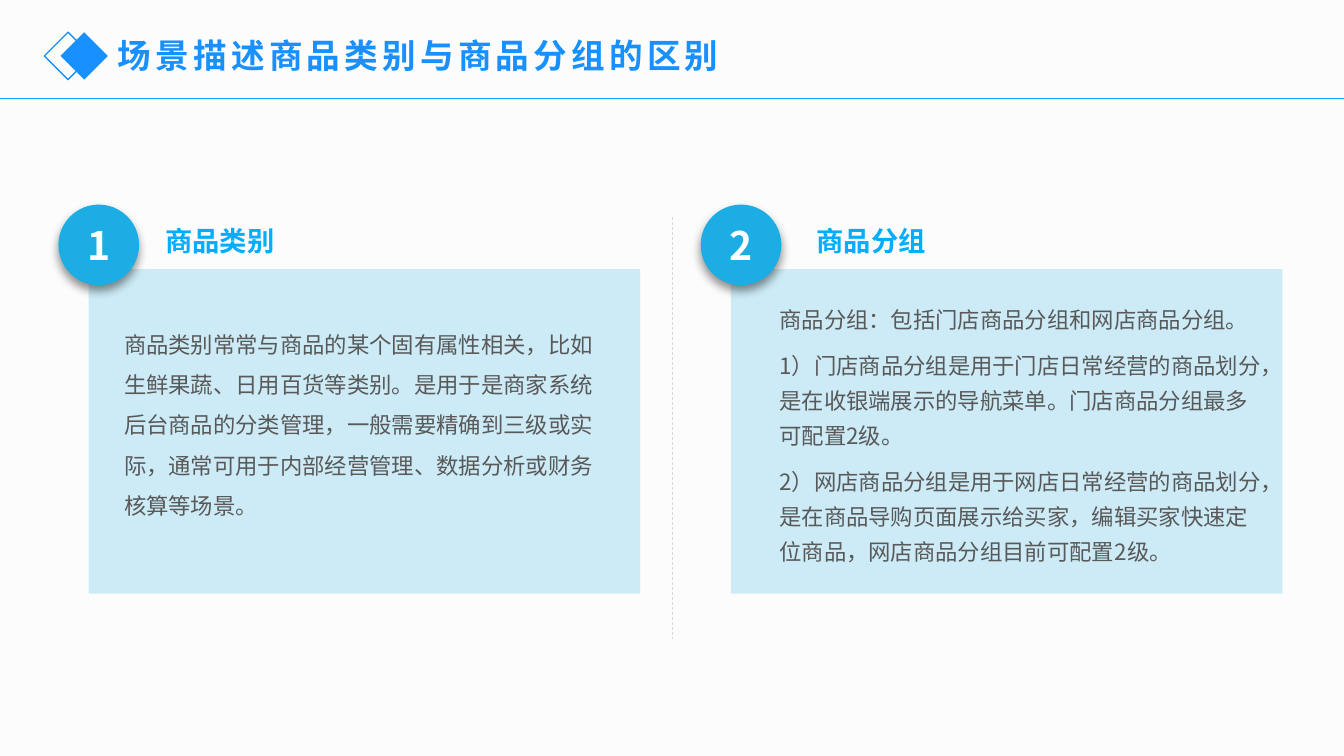
from lxml import etree
from pptx import Presentation
from pptx import util as u
from pptx.dml.color import RGBColor
from pptx.enum import dml, shapes, text
from pptx.oxml import ns

COLORS = {
    "background": "FCFCFC",
    "title": "1890FF",
    "accent": "00ADFF",
    "panel": "1CADE4",
    "body": "595959",
    "divider": "D9D9D9",
    "white": "FFFFFF",
    "shadow": "000000",
}
FONT = "Noto Sans CJK SC"
SLIDE_W, SLIDE_H = 13.33, 7.5


def rgb(name):
    return RGBColor.from_string(COLORS[name])


def add_xml(parent, tag, **attributes):
    return etree.SubElement(parent, ns.qn(tag), {k: str(v) for k, v in attributes.items()})


def place(part, left, top, width, height):
    part.left, part.top = u.Inches(left), u.Inches(top)
    part.width, part.height = u.Inches(width), u.Inches(height)


def write(part, lines, size, color, bold=False, align="LEFT", anchor="TOP",
          line_spacing=1.0, after=0, tracking=0):
    """Fill a shape, text box or placeholder with formatted paragraphs."""
    frame = part.text_frame
    frame.word_wrap = True
    frame.auto_size = text.MSO_AUTO_SIZE.NONE
    frame.vertical_anchor = getattr(text.MSO_ANCHOR, anchor)
    for index, line in enumerate(lines):
        paragraph = frame.add_paragraph() if index else frame.paragraphs[0]
        properties = paragraph._p.get_or_add_pPr()
        properties.set("marL", "0")
        properties.set("indent", "0")
        add_xml(properties, "a:buNone")
        paragraph.alignment = getattr(text.PP_ALIGN, align)
        paragraph.line_spacing = line_spacing
        paragraph.space_before = u.Pt(0)
        paragraph.space_after = u.Pt(after)
        run = paragraph.add_run()
        run.text = line
        run.font.size, run.font.bold = u.Pt(size), bold
        run.font.color.rgb = rgb(color)
        run.font.name = FONT
        run_properties = run._r.get_or_add_rPr()
        add_xml(run_properties, "a:ea", typeface=FONT)
        if tracking:
            run_properties.set("spc", str(tracking * 100))


def add_shape(slide, kind, box, fill=None, line=None, opacity=100):
    shape = slide.shapes.add_shape(kind, *map(u.Inches, box))
    shape.shadow.inherit = False
    if fill:
        shape.fill.solid()
        shape.fill.fore_color.rgb = rgb(fill)
        if opacity < 100:
            color = shape._element.spPr.find(".//" + ns.qn("a:srgbClr"))
            add_xml(color, "a:alpha", val=opacity * 1000)
    else:
        shape.fill.background()
    if line:
        shape.line.color.rgb = rgb(line)
        shape.line.width = u.Pt(1)
    else:
        shape.line.fill.background()
    return shape


def add_line(slide, start, end, color, width, dash=None):
    line = slide.shapes.add_connector(
        shapes.MSO_CONNECTOR.STRAIGHT, *map(u.Inches, (*start, *end)))
    line.line.color.rgb = rgb(color)
    line.line.width = u.Pt(width)
    if dash:
        line.line.dash_style = dash
    add_xml(line._element.spPr, "a:effectLst")


def add_header(slide, left, top, title):
    """Rule, pair of diamonds and title."""
    add_line(slide, (0, 0.98), (SLIDE_W, 0.98), "accent", 1)
    diamond = shapes.MSO_SHAPE.DIAMOND
    add_shape(slide, diamond, (left, top, 0.47, 0.47), line="title")
    add_shape(slide, diamond, (left + 0.16, top, 0.47, 0.47), fill="title")
    place(slide.shapes.title, left + 0.63, top - 0.02, 6.8, 0.5)
    write(slide.shapes.title, [title], 24, "title", bold=True, tracking=3)


def add_column(slide, box, number, heading, description, lines,
               heading_dx, text_dx, text_dy, line_spacing):
    """Tinted panel with a numbered badge, a heading and a description."""
    left, top, width, height = box
    add_shape(slide, shapes.MSO_SHAPE.RECTANGLE, box, fill="panel", opacity=21)

    # Description, brought in front of its panel
    place(description, left + text_dx, top + text_dy, 5.04, 3.02)
    write(description, lines, 16, "body", line_spacing=line_spacing, after=8)
    slide.shapes._spTree.append(description._element)

    # Heading
    label = slide.shapes.add_textbox(
        *map(u.Inches, (left + heading_dx, top - 0.49, 2, 0.44)))
    write(label, [heading], 19.5, "accent", bold=True)

    # Badge with its soft shadow
    badge = add_shape(slide, shapes.MSO_SHAPE.OVAL,
                      (left - 0.3, top - 0.64, 0.8, 0.8), fill="panel")
    effects = badge._element.spPr.find(ns.qn("a:effectLst"))
    shadow = add_xml(effects, "a:outerShdw", blurRad=u.Pt(7), dist=u.Pt(4),
                     dir=90 * 60000, algn="t", rotWithShape=0)
    add_xml(add_xml(shadow, "a:srgbClr", val=COLORS["shadow"]), "a:alpha", val=43000)
    write(badge, [number], 28, "white", bold=True, align="CENTER", anchor="MIDDLE")


def main():
    deck = Presentation()
    deck.slide_width, deck.slide_height = u.Inches(SLIDE_W), u.Inches(SLIDE_H)
    slide = deck.slides.add_slide(deck.slide_layouts.get_by_name("Two Content"))
    slide.background.fill.solid()
    slide.background.fill.fore_color.rgb = rgb("background")
    category, group = list(slide.placeholders)[1:]

    add_header(slide, 0.44, 0.32, "场景描述商品类别与商品分组的区别")
    add_column(
        slide, (0.88, 2.67, 5.47, 3.22), "1", "商品类别", category,
        ["商品类别常常与商品的某个固有属性相关，比如生鲜果蔬、日用百货等类别。"
         "是用于是商家系统后台商品的分类管理，一般需要精确到三级或实际，"
         "通常可用于内部经营管理、数据分析或财务核算等场景。"],
        heading_dx=0.66, text_dx=0.25, text_dy=0.43, line_spacing=1.5)
    add_line(slide, (6.67, 2.15), (6.67, 6.34), "divider", 0.5,
             dml.MSO_LINE.DASH)
    add_column(
        slide, (7.25, 2.67, 5.47, 3.22), "2", "商品分组", group,
        ["商品分组：包括门店商品分组和网店商品分组。",
         "1）门店商品分组是用于门店日常经营的商品划分，"
         "是在收银端展示的导航菜单。门店商品分组最多可配置2级。",
         "2）网店商品分组是用于网店日常经营的商品划分，"
         "是在商品导购页面展示给买家，编辑买家快速定位商品，"
         "网店商品分组目前可配置2级。"],
        heading_dx=0.75, text_dx=0.38, text_dy=0.24, line_spacing=1.3)
    deck.save("out.pptx")


if __name__ == "__main__":
    main()
